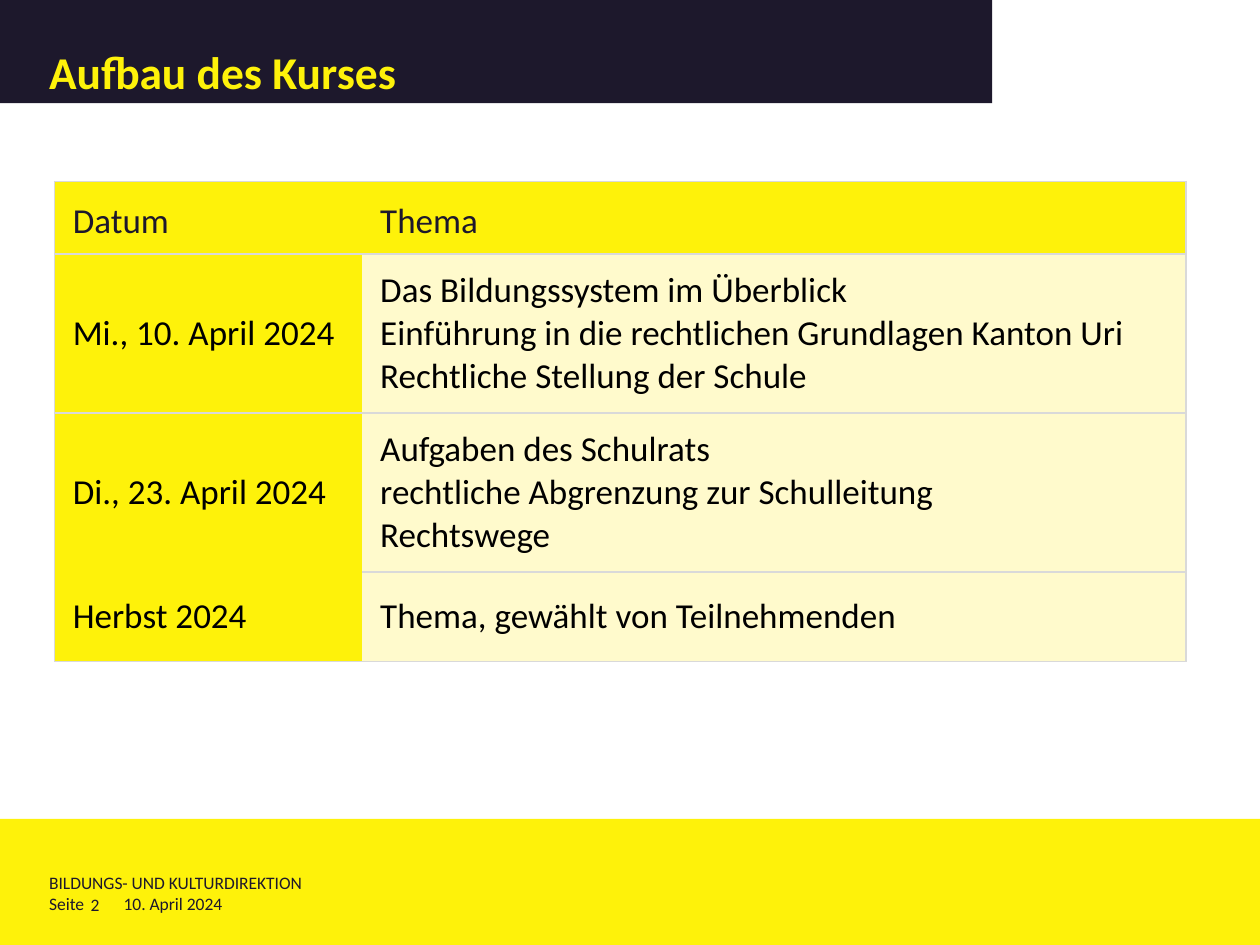
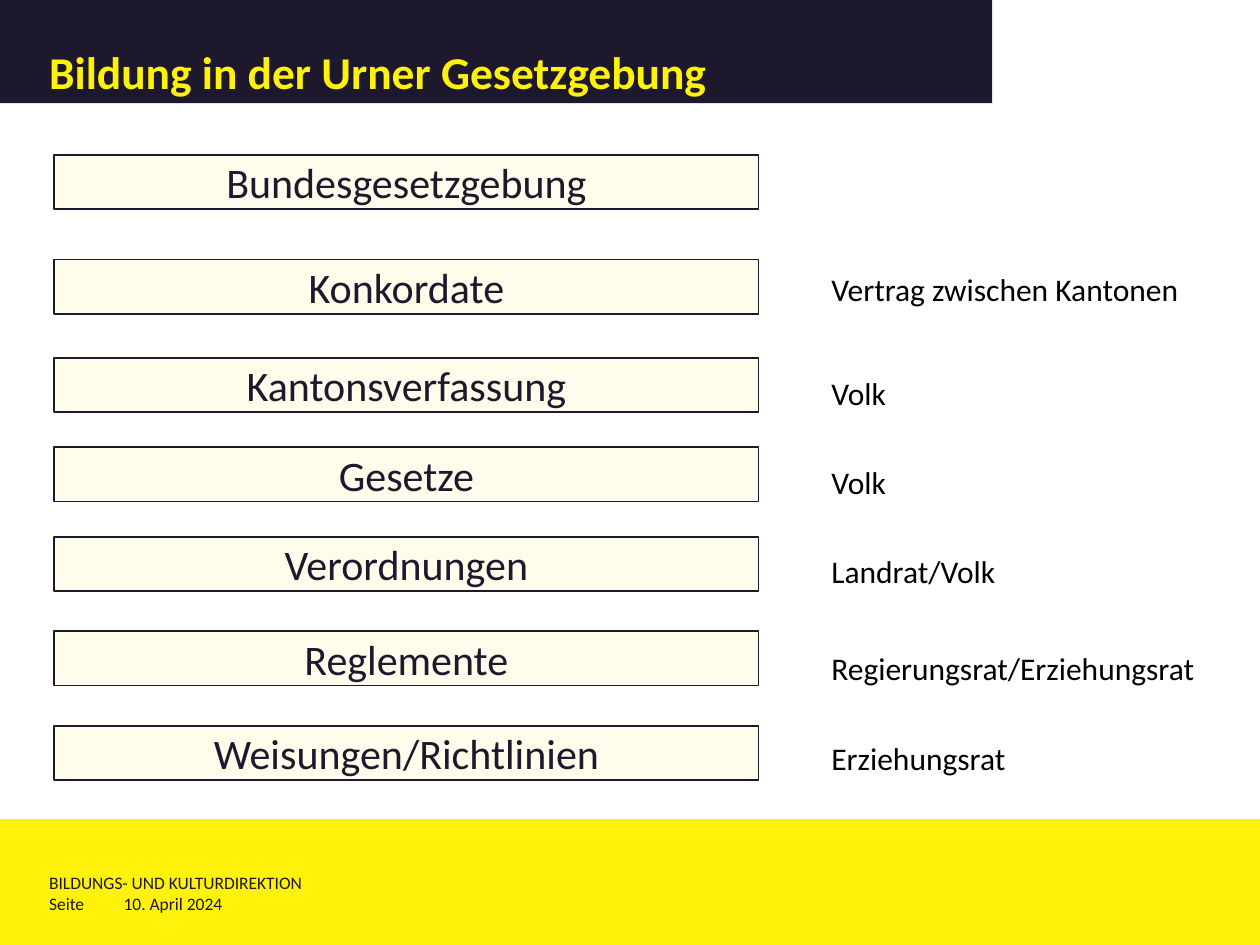
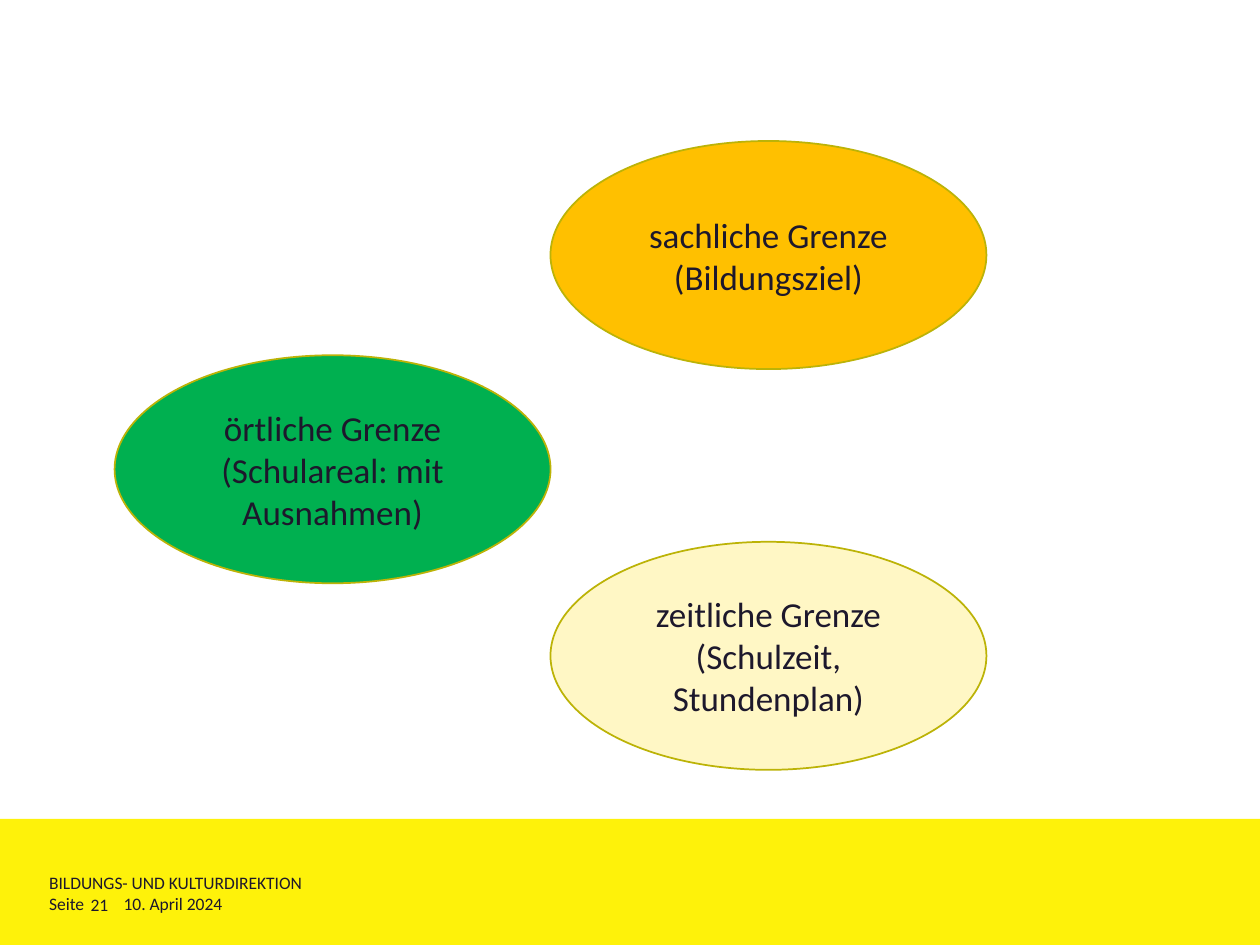
from lxml import etree
from pptx import Presentation
from pptx.dml.color import RGBColor
from pptx.enum.shapes import MSO_SHAPE
from pptx.enum.text import MSO_ANCHOR, PP_ALIGN
from pptx.oxml.ns import qn
from pptx.util import Pt

RECT, OVAL = MSO_SHAPE.RECTANGLE, MSO_SHAPE.OVAL
TOP, MIDDLE, BOTTOM = MSO_ANCHOR.TOP, MSO_ANCHOR.MIDDLE, MSO_ANCHOR.BOTTOM
LEFT, CENTER, JUSTIFY = PP_ALIGN.LEFT, PP_ALIGN.CENTER, PP_ALIGN.JUSTIFY

YELLOW = RGBColor(0xFE, 0xF2, 0x0A)
NAVY = RGBColor(0x1D, 0x18, 0x2C)
BLACK = RGBColor(0, 0, 0)
CREAM = RGBColor(0xFF, 0xFA, 0xCC)
IVORY = RGBColor(0xFF, 0xFC, 0xEC)
SAND = RGBColor(0xFF, 0xF7, 0xC5)
AMBER = RGBColor(0xFF, 0xC0, 0x00)
GREEN = RGBColor(0x00, 0xB0, 0x50)
OLIVE = RGBColor(0xBC, 0xB3, 0x07)
GREY = RGBColor(0xD9, 0xD9, 0xD9)

FONT = "Calibri"
FULL = (0, 0, 720, 540)
MARGIN = 28.1
SIDES = ("margin_left", "margin_top", "margin_right", "margin_bottom")
INSET = (7.2, 3.6, 7.2, 3.6)

COURSE = [
    ("Datum", ["Thema"]),
    ("Mi., 10. April 2024", [
        "Das Bildungssystem im Überblick",
        "Einführung in die rechtlichen Grundlagen Kanton Uri",
        "Rechtliche Stellung der Schule"]),
    ("Di., 23. April 2024", [
        "Aufgaben des Schulrats",
        "rechtliche Abgrenzung zur Schulleitung",
        "Rechtswege"]),
    ("Herbst 2024", ["Thema, gewählt von Teilnehmenden"]),
]
LEVELS = [
    (0, "Bundesgesetzgebung"),
    (59.7, "Konkordate"),
    (115.9, "Kantonsverfassung"),
    (167, "Gesetze"),
    (218.1, "Verordnungen"),
    (272.1, "Reglemente"),
    (326.1, "Weisungen/Richtlinien"),
]
BODIES = [
    (0, "Vertrag zwischen Kantonen"),
    (37.8, "Volk"),
    (29.3, "Volk"),
    (29.3, "Landrat/Volk"),
    (34.2, "Regierungsrat/Erziehungsrat"),
    (29.3, "Erziehungsrat"),
]
LIMITS = [
    (0, 122.4, GREEN, ["örtliche Grenze", "(Schulareal: mit Ausnahmen)"]),
    (249.1, 229, SAND, ["zeitliche Grenze", "(Schulzeit, Stundenplan)"]),
    (249.1, 0, AMBER, ["sachliche Grenze", "(Bildungsziel)"]),
]


def apply(item, values):
    """Set attributes of an item from a dict."""
    for name, value in values.items():
        setattr(item, name, value)


def write(frame, lines, size, color, align=LEFT, bold=False, space=1.0, gaps=()):
    """Fill a text frame with one paragraph per line."""
    for i, line in enumerate(lines):
        para = frame.add_paragraph() if i else frame.paragraphs[0]
        para.text = line
        apply(para, {"alignment": align, "line_spacing": space})
        if i and gaps:
            para.space_before = Pt(gaps[i])
        apply(para.font, {"name": FONT, "size": Pt(size), "bold": bold})
        para.font.color.rgb = color


def inset(item, values):
    """Set the four inner margins of a frame or cell."""
    apply(item, {side: Pt(value) for side, value in zip(SIDES, values)})


def shape(slide, kind, box, fill, line=None):
    """Add a flat preset shape with an optional outline."""
    item = slide.shapes.add_shape(kind, *map(Pt, box))
    item.shadow.inherit = False
    item.fill.solid()
    item.fill.fore_color.rgb = fill
    if line is None:
        item.line.fill.background()
    else:
        item.line.color.rgb = line
        item.line.width = Pt(1)
    apply(item.text_frame, {"word_wrap": True, "vertical_anchor": MIDDLE})
    return item


def label(slide, box, lines, size, color, margins=(0, 0, 0, 0), gaps=()):
    """Add a wrapping text box."""
    frame = slide.shapes.add_textbox(*map(Pt, box)).text_frame
    apply(frame, {"word_wrap": True, "vertical_anchor": TOP})
    inset(frame, margins)
    write(frame, lines, size, color, gaps=gaps)


def footer(slide, box, page):
    """Draw the yellow band with office, page and date."""
    x, y, _, _ = box
    shape(slide, RECT, box, YELLOW)
    parts = [
        (0, 30.2, 538.6, "BILDUNGS- UND KULTURDIREKTION"),
        (0, 42.4, 25.2, "Seite"),
        (42.5, 42.4, 164.2, "10. April 2024"),
    ]
    if page:
        parts.append((23.7, 42.6, 21.6, page))
    for left, top, width, text in parts:
        label(slide, (x + MARGIN + left, y + top, width, 12.2), [text], 10, NAVY)


def header(slide, box, text):
    """Draw the dark title band."""
    frame = shape(slide, RECT, box, NAVY).text_frame
    frame.vertical_anchor = BOTTOM
    inset(frame, (MARGIN, 5.7, 5.7, 2.9))
    write(frame, [text], 26, YELLOW, bold=True, space=0.8)


def page(deck, box, number="", title=""):
    """Add a slide with its shared bands."""
    x, y, width, height = box
    slide = deck.slides.add_slide(deck.slide_layouts[6])
    footer(slide, (x, y + height - 72, width, 72), number)
    if title:
        header(slide, (x, y, 567, 59), title)
    return slide


def border(cell, edges):
    """Draw or hide each edge of a cell."""
    props = cell._tc.get_or_add_tcPr()
    for edge, shown in edges.items():
        line = etree.SubElement(props, qn(f"a:ln{edge}"), w=str(Pt(1)))
        if shown:
            fill = etree.SubElement(line, qn("a:solidFill"))
            etree.SubElement(fill, qn("a:srgbClr"), val=str(GREY))
        else:
            etree.SubElement(line, qn("a:noFill"))


def course(slide, box):
    """Build the table of dates and topics."""
    rows = len(COURSE)
    table = slide.shapes.add_table(rows, 2, *map(Pt, box)).table
    apply(table, {"first_row": False, "horz_banding": False})
    for col, width in zip(table.columns, (175.7, box[2] - 175.7)):
        col.width = Pt(width)
    for row, height in zip(table.rows, (41.5, 90.8, 90.8, 51.1)):
        row.height = Pt(height)
    for r, (date, topics) in enumerate(COURSE):
        for c, lines in enumerate(([date], topics)):
            cell = table.cell(r, c)
            border(cell, {"L": c == 0, "R": c == 1,
                          "T": (r, c) != (rows - 1, 0),
                          "B": (r, c) != (rows - 2, 0)})
            cell.fill.solid()
            cell.fill.fore_color.rgb = CREAM if r and c else YELLOW
            cell.vertical_anchor = MIDDLE
            inset(cell, (10.4, 2.9, 5.2, 2.9))
            write(cell.text_frame, lines, 20, BLACK if r else NAVY,
                  JUSTIFY if r and c else LEFT, space=1.0 if r else 1.2)


def levels(slide, box):
    """Stack the levels of law beside the bodies that pass them."""
    x, y, _, height = box
    for top, text in LEVELS:
        item = shape(slide, RECT, (x, y + top, 402.5, 31), IVORY, NAVY)
        write(item.text_frame, [text], 24, NAVY, CENTER)
    gaps, names = zip(*BODIES)
    label(slide, (x + 437, y + 5.7, 232.6, height - 5.7), names, 18, BLACK,
          (7.2, 59.8, 7.2, 3.6), gaps)


def limits(slide, box):
    """Place the three ovals."""
    x, y, _, _ = box
    for left, top, fill, lines in LIMITS:
        item = shape(slide, OVAL, (x + left, y + top, 249.1, 130.3), fill, OLIVE)
        inset(item.text_frame, INSET)
        write(item.text_frame, lines, 20, NAVY, CENTER)


def main():
    """Build and save the deck."""
    deck = Presentation()
    apply(deck, {"slide_width": Pt(FULL[2]), "slide_height": Pt(FULL[3])})
    course(page(deck, FULL, "2", "Aufbau des Kurses"), (31.2, 103.7, 646.6, 274.2))
    levels(page(deck, FULL, title="Bildung in der Urner Gesetzgebung"),
           (31, 88.6, 669.6, 368.6))
    limits(page(deck, FULL, "21"), (65.5, 80.6, 498.2, 359.3))
    deck.save("out.pptx")


if __name__ == "__main__":
    main()
